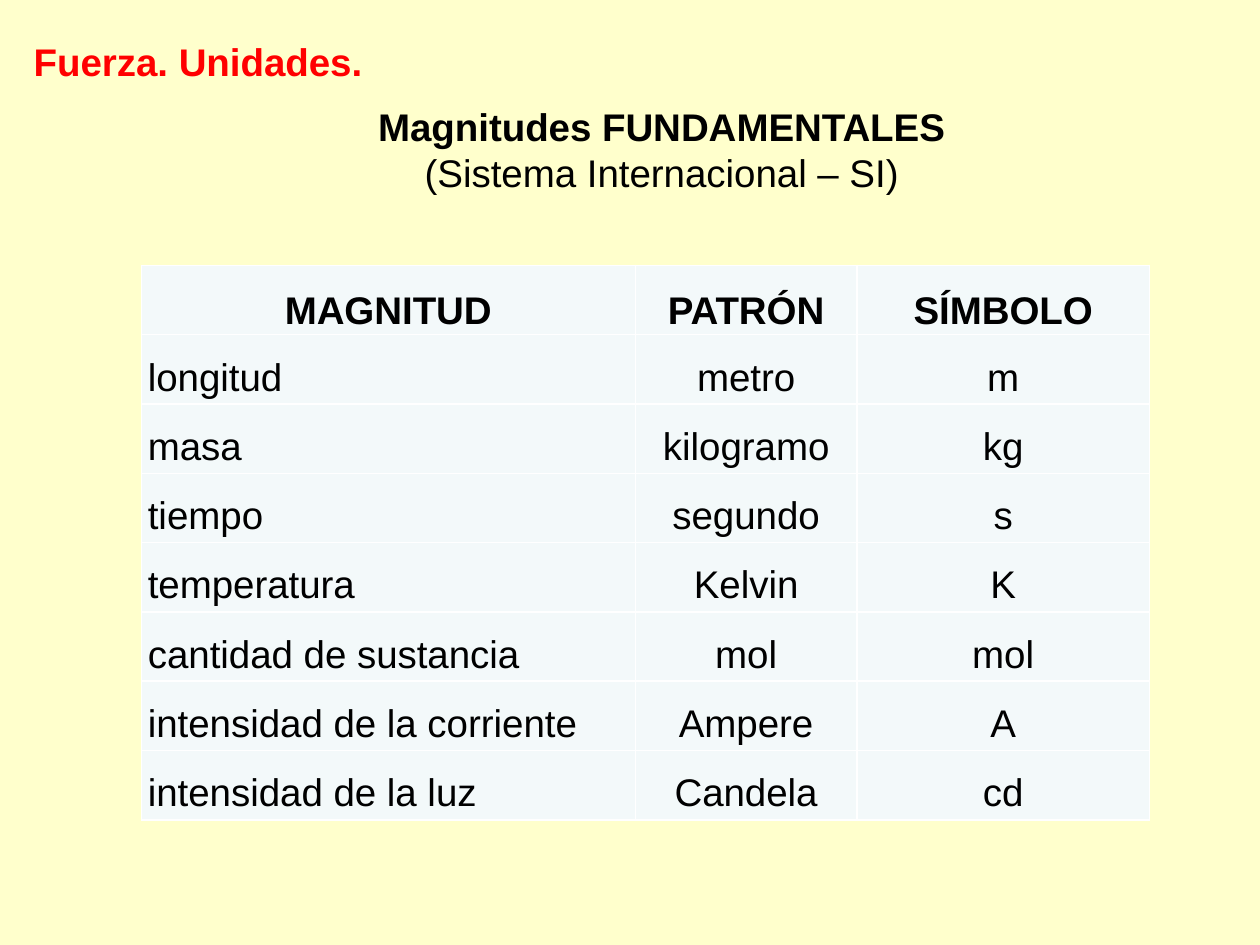
from lxml import etree
from pptx import Presentation
from pptx.dml.color import RGBColor
from pptx.enum.text import MSO_ANCHOR, PP_ALIGN
from pptx.oxml import parse_xml
from pptx.util import Cm, Pt

LEFT, CENTER, JUSTIFY = PP_ALIGN.LEFT, PP_ALIGN.CENTER, PP_ALIGN.JUSTIFY
TOP, MIDDLE = MSO_ANCHOR.TOP, MSO_ANCHOR.MIDDLE

CREAM = RGBColor(0xFF, 0xFF, 0xCC)
PALE_BLUE = RGBColor(0xF3, 0xF9, 0xFA)
WHITE = RGBColor(0xFF, 0xFF, 0xFF)
BLACK = RGBColor(0x00, 0x00, 0x00)
RED = RGBColor(0xFF, 0x00, 0x00)

FONT = "Arial"
DRAWING_NS = "http://schemas.openxmlformats.org/drawingml/2006/main"
COLUMN_SHARES = (0.49, 0.22, 0.29)

UNITS = [
    ("MAGNITUD", "PATRÓN", "SÍMBOLO"),
    ("longitud", "metro", "m"),
    ("masa", "kilogramo", "kg"),
    ("tiempo", "segundo", "s"),
    ("temperatura", "Kelvin", "K"),
    ("cantidad de sustancia", "mol", "mol"),
    ("intensidad de la corriente", "Ampere", "A"),
    ("intensidad de la luz", "Candela", "cd"),
]


def write(para, text, *, color=BLACK, bold=False, align=LEFT, spacing=None):
    para.alignment = align
    para.line_spacing = spacing
    span = para.add_run()
    span.text = text
    span.font.name = FONT
    span.font.size = Pt(22)
    span.font.bold = bold
    span.font.color.rgb = color


def add_text_frame(page, left, top, width, height):
    frame = page.shapes.add_textbox(left, top, width, height).text_frame
    frame.word_wrap = True
    return frame


def add_heading(page, left, top, width, height):
    frame = add_text_frame(page, left, top, width, height)
    write(frame.paragraphs[0], "Fuerza. Unidades.", color=RED, bold=True)


def add_subheading(page, left, top, width, height):
    frame = add_text_frame(page, left, top, width, height)
    write(frame.paragraphs[0], "Magnitudes FUNDAMENTALES", bold=True, align=CENTER)
    write(frame.add_paragraph(), "(Sistema Internacional – SI)", align=CENTER)


def add_borders(cell):
    properties = cell._tc.get_or_add_tcPr()
    for side in ("lnL", "lnR", "lnT", "lnB"):
        line = parse_xml(f'<a:{side} xmlns:a="{DRAWING_NS}" w="{Pt(1)}"/>')
        fill = etree.SubElement(line, f"{{{DRAWING_NS}}}solidFill")
        etree.SubElement(fill, f"{{{DRAWING_NS}}}srgbClr", val=str(WHITE))
        properties.append(line)


def format_cell(cell, anchor):
    cell.margin_left = cell.margin_right = Cm(0.13)
    cell.margin_top = cell.margin_bottom = 0
    cell.vertical_anchor = anchor
    add_borders(cell)
    cell.fill.solid()
    cell.fill.fore_color.rgb = PALE_BLUE


def add_units_table(page, left, top, width, height):
    table = page.shapes.add_table(
        len(UNITS), len(COLUMN_SHARES), left, top, width, height
    ).table
    table.first_row = table.horz_banding = False
    for column, share in zip(table.columns, COLUMN_SHARES):
        column.width = int(width * share)
    for row_index, entries in enumerate(UNITS):
        header = row_index == 0
        for column_index, text in enumerate(entries):
            cell = table.cell(row_index, column_index)
            format_cell(cell, MIDDLE if header else TOP)
            align = CENTER if header or column_index else JUSTIFY
            write(cell.text_frame.paragraphs[0], text,
                  bold=header, align=align, spacing=1.5)


def main():
    deck = Presentation()
    deck.slide_width, deck.slide_height = Cm(25.4), Cm(19.05)
    page = deck.slides.add_slide(deck.slide_layouts[6])
    page.background.fill.solid()
    page.background.fill.fore_color.rgb = CREAM
    add_units_table(page, Cm(2.85), Cm(5.35), Cm(20.32), Cm(11.18))
    add_subheading(page, Cm(5.94), Cm(1.95), Cm(14.8), Cm(2.14))
    add_heading(page, Cm(0.43), Cm(0.64), Cm(24.25), Cm(1.2))
    deck.save("out.pptx")


if __name__ == "__main__":
    main()
